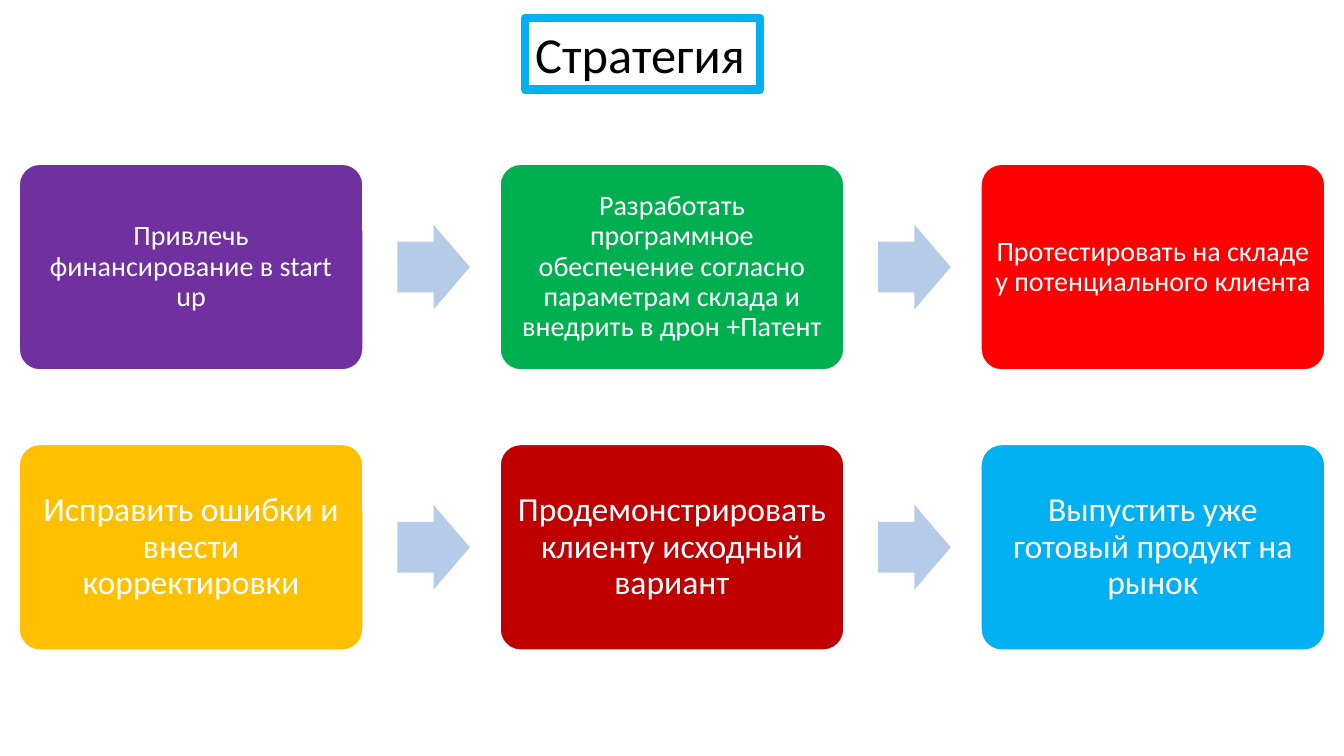
from dataclasses import dataclass

from pptx import Presentation
from pptx.dml.color import RGBColor
from pptx.enum.shapes import MSO_SHAPE as Preset
from pptx.enum.text import MSO_ANCHOR as Anchor, PP_ALIGN as Align
from pptx.shapes.autoshape import Shape
from pptx.slide import Slide
from pptx.text.text import TextFrame
from pptx.util import Inches, Pt

COLORS = {
    "purple": "7030A0",
    "green": "00B050",
    "red": "FF0000",
    "amber": "FFC000",
    "crimson": "C00000",
    "sky": "00B0F0",
    "arrow": "B5CBE7",
    "white": "FFFFFF",
    "black": "000000",
}
FONT = "Calibri"
GRID_LEFT, GRID_TOP = 0.19, 1.63
COLUMN_PITCH, ROW_PITCH = 4.77, 2.78
CARD_WIDTH, CARD_HEIGHT = 3.41, 2.04
ARROW_WIDTH, ARROW_HEIGHT = 0.72, 0.84
ARROW_OFFSET = 3.75


@dataclass(frozen=True)
class Step:
    text: str
    color: str


@dataclass(frozen=True)
class StepRow:
    size: int
    inset: float
    steps: tuple[Step, ...]


ROWS = (
    StepRow(20, 0.08, (
        Step("Привлечь финансирование в start up", "purple"),
        Step("Разработать программное обеспечение согласно параметрам "
             "склада и внедрить в дрон +Патент", "green"),
        Step("Протестировать на складе у потенциального клиента", "red"),
    )),
    StepRow(24, 0.1, (
        Step("Исправить ошибки и внести корректировки", "amber"),
        Step("Продемонстрировать клиенту исходный вариант", "crimson"),
        Step("Выпустить уже готовый продукт на рынок", "sky"),
    )),
)


def rgb(name: str) -> RGBColor:
    return RGBColor.from_string(COLORS[name])


def write(frame: TextFrame, text: str, size: int, color: str, align: Align) -> None:
    frame.word_wrap = True
    para = frame.paragraphs[0]
    para.text = text
    para.alignment = align
    para.font.name = FONT
    para.font.size = Pt(size)
    para.font.color.rgb = rgb(color)


def add_filled(page: Slide, preset: Preset, left: float, top: float,
               width: float, height: float, color: str) -> Shape:
    shape = page.shapes.add_shape(
        preset, Inches(left), Inches(top), Inches(width), Inches(height))
    shape.shadow.inherit = False
    shape.fill.solid()
    shape.fill.fore_color.rgb = rgb(color)
    shape.line.fill.background()
    return shape


def add_title(page: Slide) -> None:
    box = page.shapes.add_textbox(Inches(5.21), Inches(0.18), Inches(2.33), Inches(0.71))
    box.line.color.rgb = rgb("sky")
    box.line.width = Pt(6)
    write(box.text_frame, "Стратегия", 36, "black", Align.LEFT)


def add_card(page: Slide, step: Step, row: StepRow, left: float, top: float) -> None:
    card = add_filled(page, Preset.ROUNDED_RECTANGLE, left, top,
                      CARD_WIDTH, CARD_HEIGHT, step.color)
    card.adjustments[0] = 0.1
    card.line.color.rgb = rgb("white")
    card.line.width = Pt(1)
    frame = card.text_frame
    frame.margin_left = frame.margin_right = Inches(row.inset)
    frame.margin_top = frame.margin_bottom = Inches(row.inset)
    frame.vertical_anchor = Anchor.MIDDLE
    write(frame, step.text, row.size, "white", Align.CENTER)
    frame.paragraphs[0].line_spacing = 0.9


def add_arrow(page: Slide, left: float, top: float) -> None:
    arrow = add_filled(page, Preset.RIGHT_ARROW, left + ARROW_OFFSET,
                       top + (CARD_HEIGHT - ARROW_HEIGHT) / 2,
                       ARROW_WIDTH, ARROW_HEIGHT, "arrow")
    arrow.adjustments[0] = 0.6
    arrow.adjustments[1] = 0.5


def add_row(page: Slide, row: StepRow, top: float) -> None:
    for column, step in enumerate(row.steps):
        left = GRID_LEFT + column * COLUMN_PITCH
        add_card(page, step, row, left, top)
        if column < len(row.steps) - 1:
            add_arrow(page, left, top)


def main() -> None:
    deck = Presentation()
    deck.slide_width, deck.slide_height = Inches(13.33), Inches(7.5)
    page = deck.slides.add_slide(deck.slide_layouts[6])
    add_title(page)
    for index, row in enumerate(ROWS):
        add_row(page, row, GRID_TOP + index * ROW_PITCH)
    deck.save("out.pptx")


if __name__ == "__main__":
    main()
